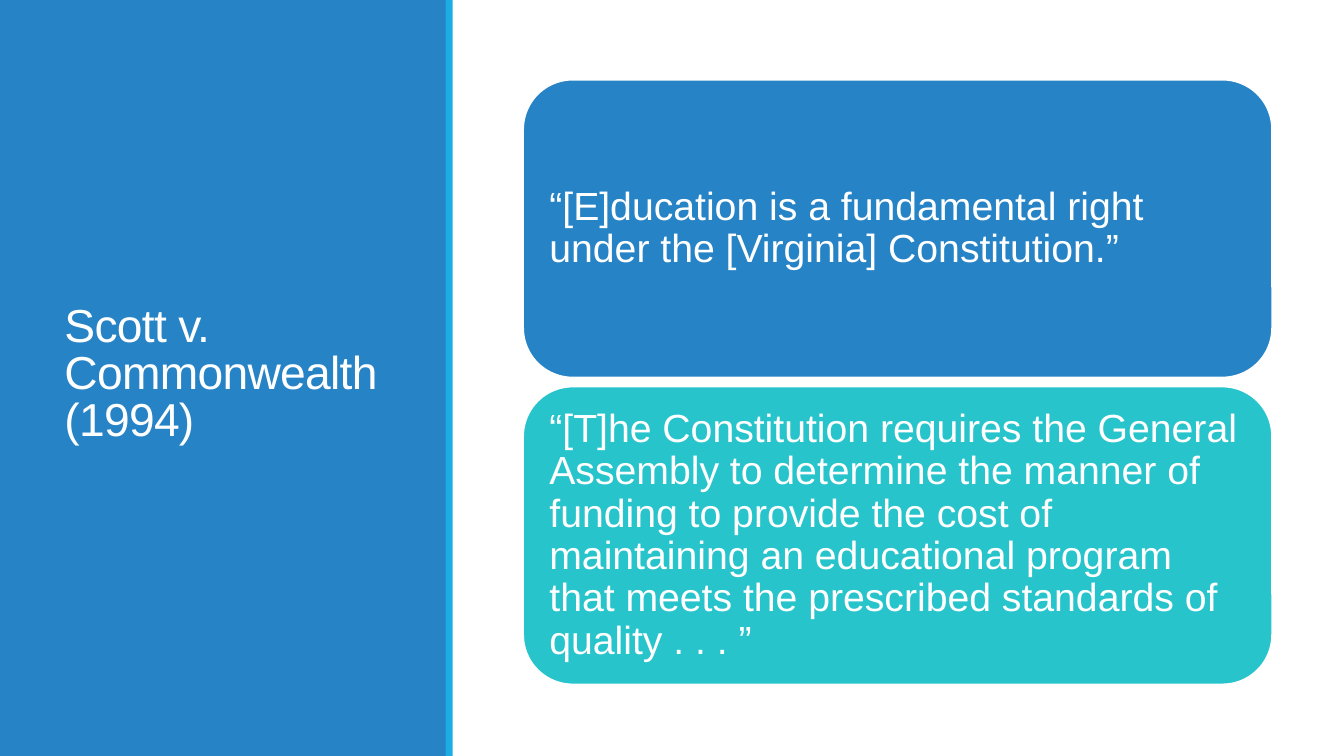
from dataclasses import dataclass

from pptx import Presentation
from pptx.dml.color import RGBColor
from pptx.enum.shapes import MSO_SHAPE
from pptx.enum.text import MSO_ANCHOR, PP_ALIGN
from pptx.util import Pt

RECTANGLE = MSO_SHAPE.RECTANGLE
ROUNDED = MSO_SHAPE.ROUNDED_RECTANGLE
MIDDLE = MSO_ANCHOR.MIDDLE
LEFT = PP_ALIGN.LEFT


@dataclass(frozen=True)
class Theme:
    font: str = "Arial"
    blue: str = "2683C6"
    sky: str = "1CADE4"
    teal: str = "28C4CC"
    white: str = "FFFFFF"
    title_size: float = 33
    quote_size: float = 28


class SlideBuilder:
    """Holds the theme and the current page."""

    def __init__(self, page, theme):
        self.page = page
        self.theme = theme

    def block(self, kind, left, top, width, height, fill, outline=None):
        box = self.page.shapes.add_shape(kind, Pt(left), Pt(top), Pt(width), Pt(height))
        box.shadow.inherit = False
        box.fill.solid()
        box.fill.fore_color.rgb = RGBColor.from_string(fill)
        if outline:
            box.line.color.rgb = RGBColor.from_string(outline)
            box.line.width = Pt(1.25)
        else:
            box.line.fill.background()
        return box

    def set_text(self, box, text, size, line_spacing, inset=None, tracking=None):
        frame = box.text_frame
        frame_format = {"word_wrap": True, "vertical_anchor": MIDDLE}
        if inset is not None:
            for side in ("left", "top", "right", "bottom"):
                frame_format[f"margin_{side}"] = Pt(inset)
        para = frame.paragraphs[0]
        span = para.add_run()
        span.text = text
        formats = (
            (frame, frame_format),
            (para, {"alignment": LEFT, "line_spacing": line_spacing}),
            (span.font, {"name": self.theme.font, "size": Pt(size)}),
        )
        for target, values in formats:
            for name, value in values.items():
                setattr(target, name, value)
        span.font.color.rgb = RGBColor.from_string(self.theme.white)
        if tracking is not None:
            span.font._element.set("spc", str(round(tracking * 100)))

    def title(self, text, left, top, width, height):
        box = self.page.shapes.add_textbox(Pt(left), Pt(top), Pt(width), Pt(height))
        self.set_text(box, text, self.theme.title_size, 0.85, tracking=-0.5)

    def quote(self, text, left, top, width, height, fill):
        box = self.block(ROUNDED, left, top, width, height, fill, self.theme.white)
        self.set_text(box, text, self.theme.quote_size, 0.9, inset=8.4)


def main():
    deck = Presentation()
    deck.slide_width, deck.slide_height = Pt(960), Pt(540)
    theme = Theme()
    builder = SlideBuilder(deck.slides.add_slide(deck.slide_layouts[6]), theme)

    # Side panel with title and accent stripe
    builder.block(RECTANGLE, 0, 0, 319, 540, theme.blue)
    builder.title("Scott v. Commonwealth (1994)", 39, 41, 242.6, 454.4)
    builder.block(RECTANGLE, 318.4, 0, 5, 540, theme.sky)

    # Stacked quotations
    quotes = (
        ("“[E]ducation is a fundamental right under the [Virginia] Constitution.” ", theme.blue),
        ("“[T]he Constitution requires the General Assembly to determine the manner of "
         "funding to provide the cost of maintaining an educational program that meets "
         "the prescribed standards of quality . . . ”", theme.teal),
    )
    for row, (text, fill) in enumerate(quotes):
        builder.quote(text, 373.7, 56.9 + row * 219.2, 535, 212.8, fill)

    deck.save("out.pptx")


if __name__ == "__main__":
    main()
